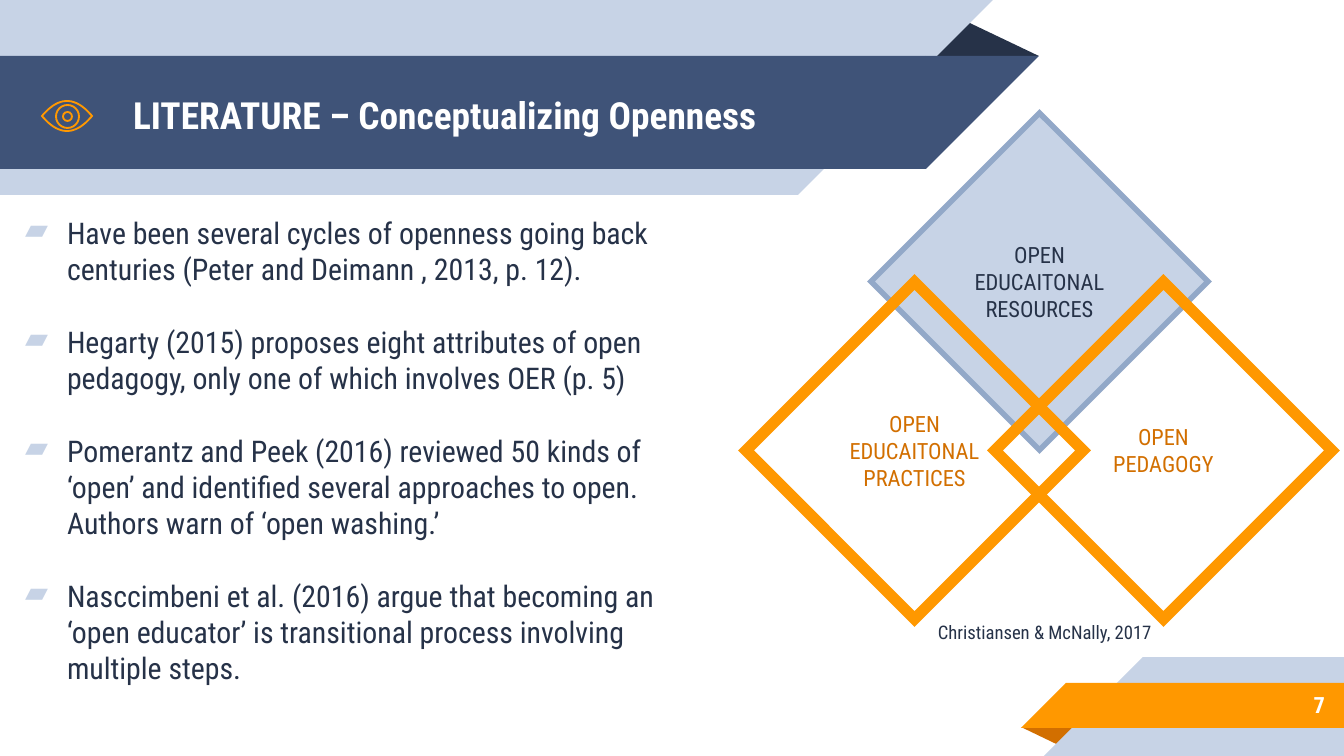
from dataclasses import dataclass
from typing import NamedTuple, Optional

from lxml.etree import SubElement
from pptx import Presentation
from pptx.dml.color import RGBColor
from pptx.enum.shapes import MSO_SHAPE
from pptx.enum.text import MSO_ANCHOR, PP_ALIGN
from pptx.oxml.ns import qn
from pptx.shapes.autoshape import Shape
from pptx.slide import Slide
from pptx.text.text import TextFrame
from pptx.util import Emu, Inches, Pt

PAGE_WIDTH, PAGE_HEIGHT = 1344, 756
SCALE = Inches(10) / PAGE_WIDTH
FONT = "Roboto Condensed"
INSET = 13
BULLET_INDENT = 42
DIAMOND_SIZE = 337

WHITE = RGBColor(0xFF, 0xFF, 0xFF)
PALE = RGBColor(0xC7, 0xD3, 0xE6)
STEEL = RGBColor(0x92, 0xA8, 0xC8)
NAVY = RGBColor(0x3F, 0x53, 0x78)
INK = RGBColor(0x26, 0x32, 0x48)
ORANGE = RGBColor(0xFF, 0x98, 0x00)
RUST = RGBColor(0xD2, 0x6F, 0x00)


class Box(NamedTuple):
    left: int
    top: int
    width: int
    height: int


@dataclass(frozen=True)
class Part:
    kind: MSO_SHAPE
    box: Box
    fill: Optional[RGBColor] = None
    line: Optional[RGBColor] = None
    line_points: int = 1
    flip: str = ""
    rotation: int = 0


@dataclass(frozen=True)
class Style:
    size: int
    color: RGBColor
    bold: bool = False
    align: PP_ALIGN = PP_ALIGN.LEFT
    bulleted: bool = False


@dataclass(frozen=True)
class Label:
    box: Box
    texts: tuple[str, ...]
    style: Style
    anchor: MSO_ANCHOR = MSO_ANCHOR.MIDDLE
    wrap: bool = True


@dataclass(frozen=True)
class Diamond:
    left: int
    top: int
    text: str
    color: RGBColor
    line: RGBColor
    line_points: int
    fill: Optional[RGBColor] = None


def px(length: int) -> Emu:
    return Emu(round(length * SCALE))


def paint(shape: Shape, fill: Optional[RGBColor], line: Optional[RGBColor], points: int) -> None:
    shape.shadow.inherit = False
    if fill is None:
        shape.fill.background()
    else:
        shape.fill.solid()
        shape.fill.fore_color.rgb = fill
    if line is None:
        shape.line.fill.background()
    else:
        shape.line.color.rgb = line
        shape.line.width = Pt(points)
        SubElement(shape.line._get_or_add_ln(), qn("a:miter"), lim="800000")


def add_part(page: Slide, part: Part) -> Shape:
    shape = page.shapes.add_shape(part.kind, *map(px, part.box))
    paint(shape, part.fill, part.line, part.line_points)
    shape.rotation = part.rotation
    if part.flip:
        shape.element.spPr.find(qn("a:xfrm")).set(part.flip, "1")
    return shape


def add_fold(page: Slide, box: Box, fill: RGBColor, rotation: int = 0) -> None:
    fold = add_part(page, Part(MSO_SHAPE.ISOSCELES_TRIANGLE, box, fill, rotation=rotation))
    fold.adjustments[0] = 0.32


def add_header_band(page: Slide, box: Box, fill: RGBColor) -> None:
    left, top, width, height = box
    add_part(page, Part(MSO_SHAPE.RECTANGLE, box, fill))
    corner = Box(left + width, top, height, height)
    add_part(page, Part(MSO_SHAPE.RIGHT_TRIANGLE, corner, fill, flip="flipV"))


def add_footer_band(page: Slide, box: Box, fill: RGBColor) -> None:
    left, top, width, height = box
    add_part(page, Part(MSO_SHAPE.RECTANGLE, box, fill))
    corner = Box(left - height, top, height, height)
    add_part(page, Part(MSO_SHAPE.RIGHT_TRIANGLE, corner, fill, flip="flipH"))


def add_eye(page: Slide, center_x: int, center_y: int) -> None:
    half_width, half_height, steps = 25, 15, 20
    ratios = [step / steps for step in range(-steps, steps + 1)]
    upper = [(ratio, ratio * ratio - 1) for ratio in ratios]
    lower = [(ratio, 1 - ratio * ratio) for ratio in reversed(ratios)]
    points = [
        (10 * (center_x + half_width * x), 10 * (center_y + half_height * y))
        for x, y in upper + lower
    ]
    builder = page.shapes.build_freeform(*points[0], scale=SCALE / 10)
    builder.add_line_segments(points[1:], close=True)
    paint(builder.convert_to_shape(), None, ORANGE, 1)
    for diameter in (9, 23):
        radius = diameter // 2
        circle = Box(center_x - radius, center_y - radius, diameter, diameter)
        add_part(page, Part(MSO_SHAPE.OVAL, circle, line=ORANGE))


def write(frame: TextFrame, texts: tuple[str, ...], style: Style, anchor: MSO_ANCHOR, wrap: bool) -> None:
    frame.word_wrap = wrap
    frame.vertical_anchor = anchor
    frame.margin_left = frame.margin_right = px(INSET)
    frame.margin_top = frame.margin_bottom = px(INSET)
    for index, text in enumerate(texts):
        para = frame.add_paragraph() if index else frame.paragraphs[0]
        para.text = text
        para.alignment = style.align
        if style.bulleted:
            para.space_before = para.space_after = Pt(10)
            properties = para._p.get_or_add_pPr()
            properties.set("marL", str(px(BULLET_INDENT)))
            properties.set("indent", str(-px(BULLET_INDENT)))
            color = SubElement(properties, qn("a:buClr"))
            SubElement(color, qn("a:srgbClr"), val=str(PALE))
            SubElement(properties, qn("a:buChar"), char="▰")
        para.font.name = FONT
        para.font.size = Pt(style.size)
        para.font.bold = style.bold
        para.font.color.rgb = style.color


def add_label(page: Slide, label: Label) -> None:
    box = page.shapes.add_textbox(*map(px, label.box))
    write(box.text_frame, label.texts, label.style, label.anchor, label.wrap)


def add_diamond(page: Slide, diamond: Diamond) -> None:
    box = Box(diamond.left, diamond.top, DIAMOND_SIZE, DIAMOND_SIZE)
    part = Part(MSO_SHAPE.DIAMOND, box, diamond.fill, diamond.line, diamond.line_points)
    style = Style(12, diamond.color, align=PP_ALIGN.CENTER)
    write(add_part(page, part).text_frame, (diamond.text,), style, MSO_ANCHOR.MIDDLE, True)


FINDINGS = (
    "Have been several cycles of openness going back centuries (Peter and Deimann , 2013, p. 12).",
    "Hegarty (2015) proposes eight attributes of open pedagogy, only one of which involves OER (p. 5)",
    "Pomerantz and Peek (2016) reviewed 50 kinds of ‘open’ and identified several approaches to open. "
    "Authors warn of ‘open washing.’",
    "Nasccimbeni et al. (2016) argue that becoming an ‘open educator’ is transitional process "
    "involving multiple steps.",
)
LABELS = (
    Label(Box(120, 58, 773, 113), ("LITERATURE – Conceptualizing Openness",), Style(20, WHITE, True)),
    Label(Box(1120, 681, 218, 47), ("7",), Style(12, WHITE, True, PP_ALIGN.RIGHT)),
    Label(Box(12, 202, 669, 503), FINDINGS, Style(16, INK, bulleted=True), MSO_ANCHOR.TOP),
    Label(Box(925, 614, 243, 36), ("Christiansen & McNally, 2017",), Style(10, INK), wrap=False),
)
DIAMONDS = (
    Diamond(871, 113, "OPEN EDUCAITONAL RESOURCES", INK, STEEL, 3, PALE),
    Diamond(746, 282, "OPEN EDUCAITONAL PRACTICES", RUST, ORANGE, 6),
    Diamond(995, 282, "OPEN PEDAGOGY", RUST, ORANGE, 6),
)


def main() -> None:
    deck = Presentation()
    deck.slide_width, deck.slide_height = px(PAGE_WIDTH), px(PAGE_HEIGHT)
    page = deck.slides.add_slide(deck.slide_layouts[6])
    add_fold(page, Box(925, 19, 114, 37), INK)
    add_header_band(page, Box(0, 0, 798, 195), PALE)
    add_header_band(page, Box(0, 56, 926, 113), NAVY)
    add_fold(page, Box(1021, 727, 58, 19), RUST, rotation=180)
    add_footer_band(page, Box(1143, 657, 201, 99), PALE)
    add_footer_band(page, Box(1066, 683, 278, 45), ORANGE)
    add_eye(page, 67, 116)
    for label in LABELS:
        add_label(page, label)
    for diamond in DIAMONDS:
        add_diamond(page, diamond)
    deck.save("out.pptx")


if __name__ == "__main__":
    main()
